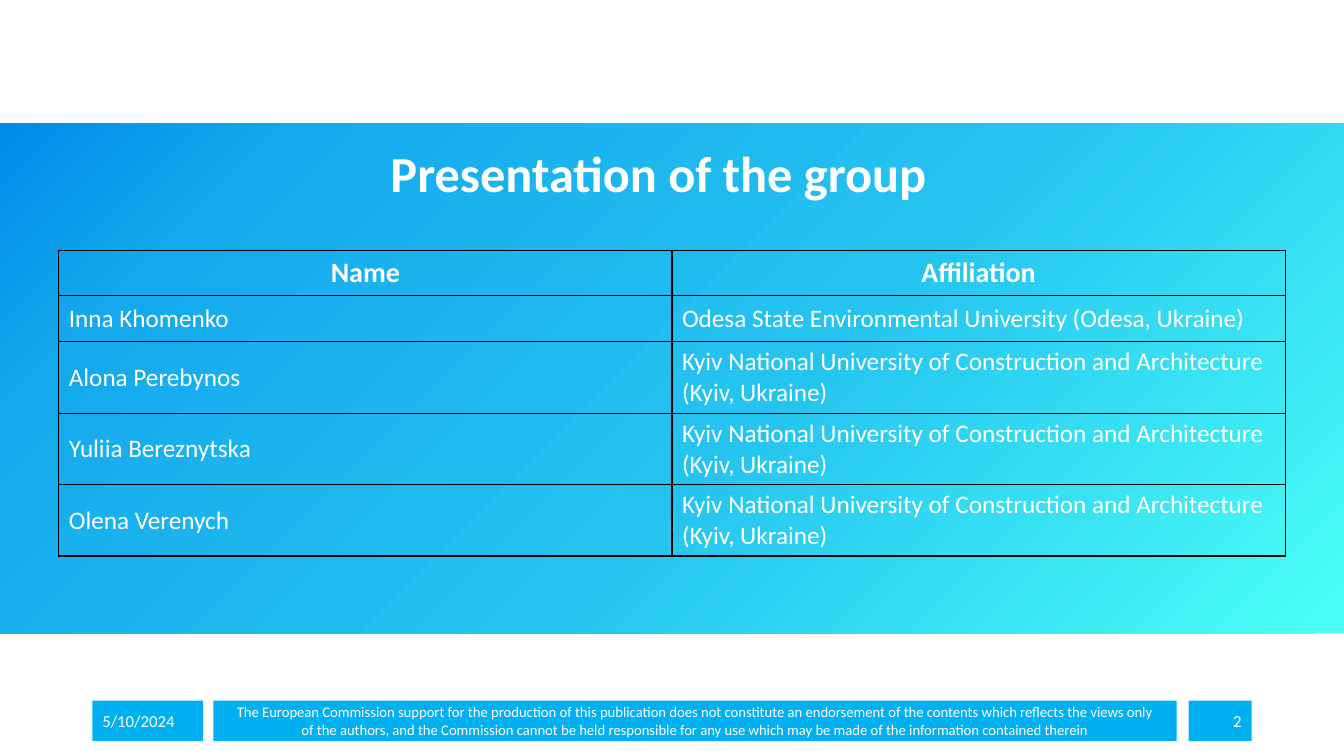
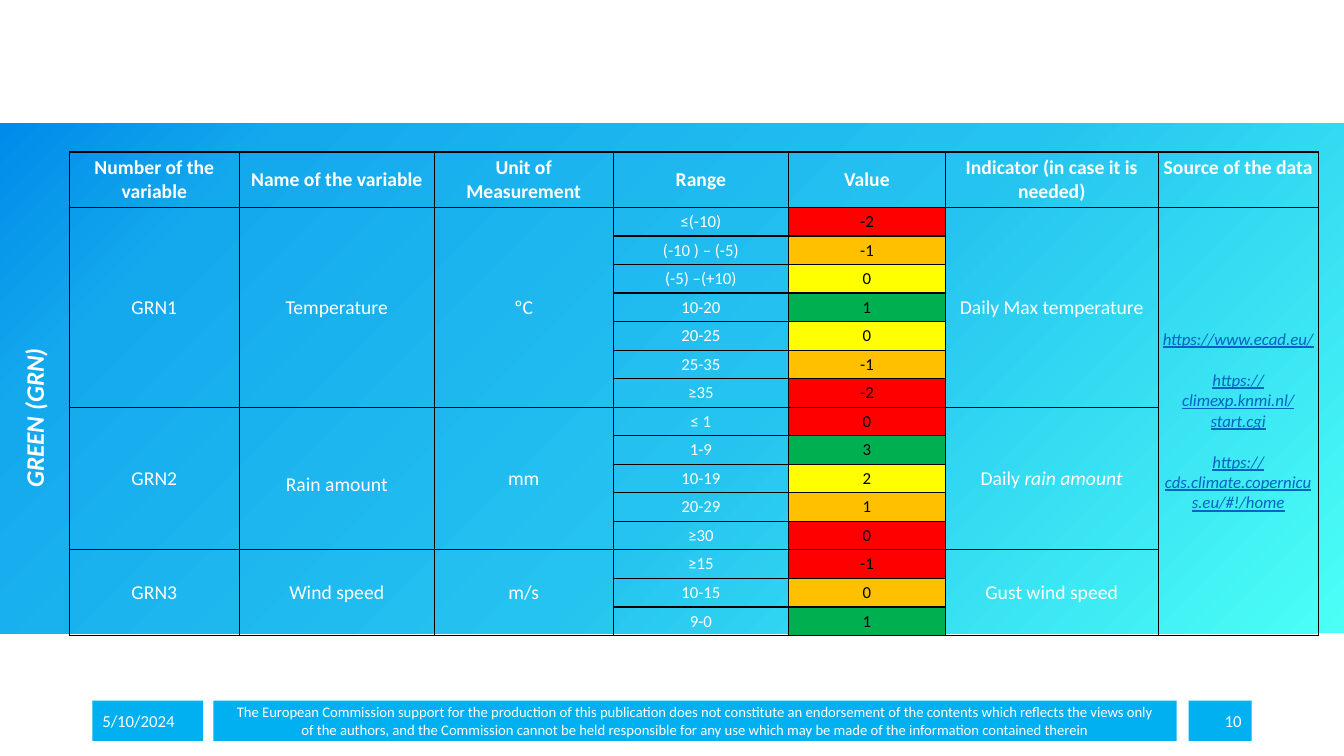
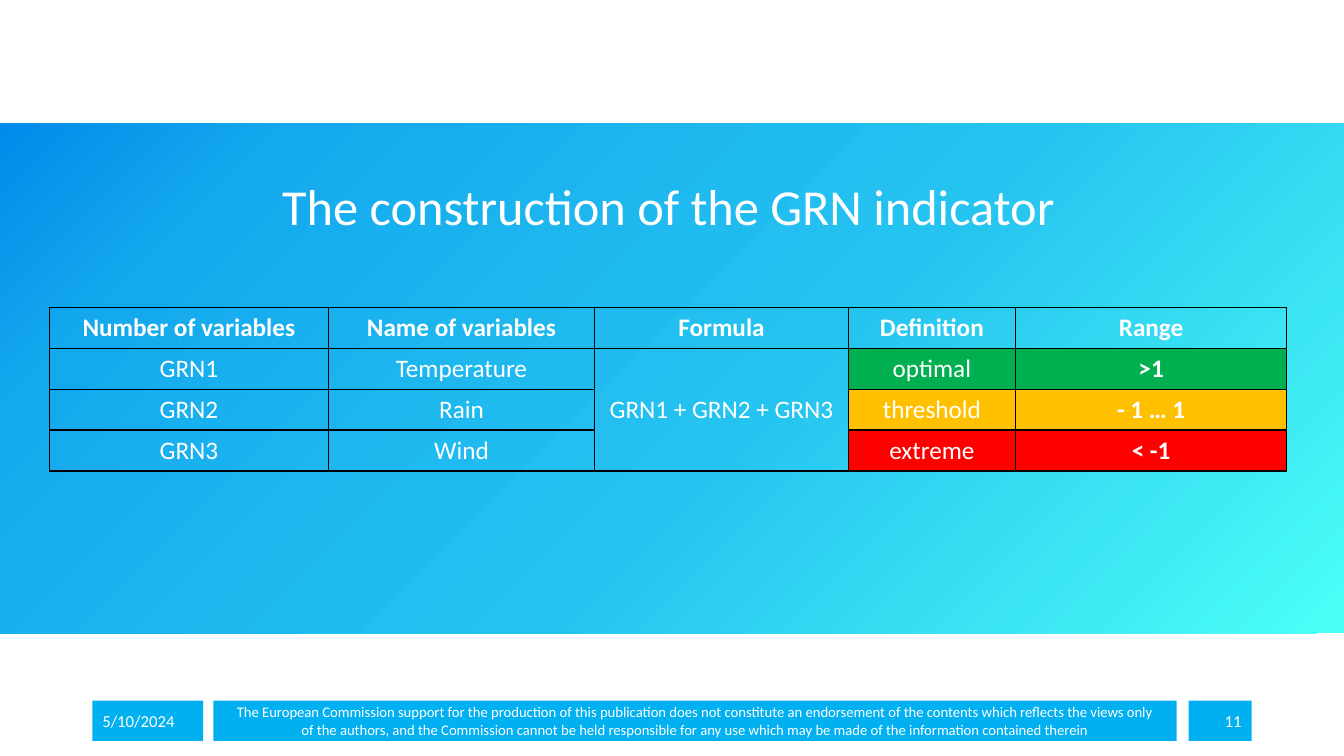
import dataclasses
import typing

import pptx
import pptx.dml.color
import pptx.enum.shapes
import pptx.enum.text
import pptx.oxml
import pptx.oxml.ns
import pptx.util

ALIGN = pptx.enum.text.PP_ALIGN
ANCHOR = pptx.enum.text.MSO_ANCHOR
COLUMNS, ROWS = 160, 90  # slide grid, square units
UNIT = pptx.util.Pt(6)


@dataclasses.dataclass(frozen=True)
class Theme:
    font: str = "Calibri"
    white: str = "FFFFFF"
    black: str = "000000"
    link: str = "0563C1"
    footer: str = "00B0F0"
    red: str = "FF0000"
    orange: str = "FFC000"
    yellow: str = "FFFF00"
    green: str = "00B050"
    band: tuple = ((0, "4BFFF6"), (44, "25C3F0"), (84, "14A9ED"), (100, "008BEA"))
    title: float = 36
    header: float = 20
    body: float = 18
    cell: float = 14
    small: float = 12
    legal: float = 10.5


THEME = Theme()
DATE = "5/10/2024"
DISCLAIMER = (
    "The European Commission support for the production of this publication does not "
    "constitute an endorsement of the contents which reflects the views only\n"
    "of the authors, and the Commission cannot be held responsible for any use which "
    "may be made of the information contained therein"
)


@dataclasses.dataclass
class Cell:
    text: str
    size: float = THEME.body
    color: str = THEME.white
    bold: bool = False
    italic: bool = False
    underline: bool = False
    fill: typing.Optional[str] = None
    align: ALIGN = ALIGN.CENTER
    anchor: ANCHOR = ANCHOR.MIDDLE
    spacing: float = 1
    gap: float = 0  # points between paragraphs
    italic_tail: str = ""


# Basics
def grid(n):
    return int(round(n * UNIT))


def rgb(value):
    return pptx.dml.color.RGBColor.from_string(value)


def write(tf, text, size, color=THEME.white, bold=False, italic=False, underline=False,
          align=ALIGN.LEFT, spacing=1, gap=0):
    tf.text = text
    for i, p in enumerate(tf.paragraphs):
        p.alignment = align
        p.line_spacing = spacing
        if gap and i:
            p.space_before = pptx.util.Pt(gap)
        for r in p.runs:
            style_run(r, size, color, bold, italic, underline)


def style_run(r, size, color, bold=False, italic=False, underline=False):
    r.font.name = THEME.font
    r.font.size = pptx.util.Pt(size)
    r.font.color.rgb = rgb(color)
    r.font.bold, r.font.italic, r.font.underline = bold, italic, underline


def add_rect(slide, left, top, width, height):
    sp = slide.shapes.add_shape(pptx.enum.shapes.MSO_SHAPE.RECTANGLE,
                                *map(grid, (left, top, width, height)))
    sp.shadow.inherit = False
    sp.line.fill.background()
    return sp


def add_label(slide, at, text, size, anchor=ANCHOR.TOP, **look):
    sp = slide.shapes.add_textbox(*map(grid, at))
    tf = sp.text_frame
    tf.word_wrap = True
    tf.vertical_anchor = anchor
    write(tf, text, size, **look)
    return sp


# Shared parts of every slide
def add_band(slide):
    sp = add_rect(slide, 0, 14.7, COLUMNS, 60.7)
    sp.fill.gradient()
    sp.fill.gradient_angle = 135
    stops = next(sp._element.spPr.iter(pptx.oxml.ns.qn("a:gsLst")))
    for stop in list(stops):
        stops.remove(stop)
    for position, color in THEME.band:
        stops.append(pptx.oxml.parse_xml(
            f'<a:gs {pptx.oxml.ns.nsdecls("a")} pos="{position * 1000}">'
            f'<a:srgbClr val="{color}"/></a:gs>'))


def add_footer(slide, number):
    boxes = (
        (11, 13.2, DATE, THEME.small, ALIGN.LEFT),
        (25.4, 114.7, DISCLAIMER, THEME.legal, ALIGN.CENTER),
        (141.5, 7.5, str(number), THEME.small, ALIGN.RIGHT),
    )
    for left, width, text, size, align in boxes:
        sp = add_rect(slide, left, 83.4, width, 4.8)
        sp.fill.solid()
        sp.fill.fore_color.rgb = rgb(THEME.footer)
        sp.text_frame.word_wrap = True
        sp.text_frame.vertical_anchor = ANCHOR.MIDDLE
        write(sp.text_frame, text, size, align=align)


def new_slide(prs, number):
    slide = prs.slides.add_slide(prs.slide_layouts[6])
    add_band(slide)
    add_footer(slide, number)
    return slide


# Tables: None in the data continues the cell above
def add_borders(cell):
    tc_pr = cell._tc.get_or_add_tcPr()
    for side in "LRTB":
        tc_pr.append(pptx.oxml.parse_xml(
            f'<a:ln{side} {pptx.oxml.ns.nsdecls("a")} w="12700"><a:solidFill>'
            f'<a:srgbClr val="{THEME.black}"/></a:solidFill></a:ln{side}>'))


def fill_cell(cell, data):
    add_borders(cell)
    if data and data.fill:
        cell.fill.solid()
        cell.fill.fore_color.rgb = rgb(data.fill)
    else:
        cell.fill.background()
    if data is None:
        return
    cell.vertical_anchor = data.anchor
    write(cell.text_frame, data.text, data.size, data.color, data.bold, data.italic,
          data.underline, data.align, data.spacing, data.gap)
    if data.italic_tail:
        r = cell.text_frame.paragraphs[0].add_run()
        r.text = data.italic_tail
        style_run(r, data.size, data.color, italic=True)


def add_table(slide, left, top, widths, heights, data, inset=None):
    frame = slide.shapes.add_table(len(heights), len(widths), grid(left), grid(top),
                                   grid(sum(widths)), grid(sum(heights)))
    table = frame.table
    table.first_row = table.horz_banding = False
    for column, width in zip(table.columns, widths):
        column.width = grid(width)
    for row, height in zip(table.rows, heights):
        row.height = grid(height)
    for c in range(len(widths)):
        start = 0
        for r in range(len(heights)):
            cell = table.cell(r, c)
            if inset is not None:
                cell.margin_left = cell.margin_right = grid(inset)
                cell.margin_top = cell.margin_bottom = grid(inset)
            fill_cell(cell, data[r][c])
            if data[r][c]:
                start = r
            if r > start and (r + 1 == len(heights) or data[r + 1][c]):
                table.cell(start, c).merge(cell)


# Slides
def group_slide(prs):
    slide = new_slide(prs, 2)
    add_label(slide, (11, 16.3, 134.8, 8.5), "Presentation of the group", THEME.title,
              ANCHOR.BOTTOM, bold=True, align=ALIGN.CENTER, spacing=0.9)
    kyiv = "Kyiv National University of Construction and Architecture (Kyiv, Ukraine)"
    members = (
        ("Inna Khomenko", "Odesa State Environmental University (Odesa, Ukraine)"),
        ("Alona Perebynos", kyiv),
        ("Yuliia Bereznytska", kyiv),
        ("Olena Verenych", kyiv),
    )
    data = [[Cell(t, THEME.header, bold=True, anchor=ANCHOR.TOP)
             for t in ("Name", "Affiliation")]]
    data += [[Cell(t, align=ALIGN.LEFT) for t in member] for member in members]
    add_table(slide, 7, 29.8, [73] * 2, [5.4, 5.5] + [8.5] * 3, data)


def variables_slide(prs):
    slide = new_slide(prs, 10)
    side = add_label(slide, (-6.5, 46.3, 21.1, 4.8), "GREEN (GRN)", THEME.body,
                     bold=True, italic=True)
    side.rotation = 270

    t = THEME
    groups = (
        (Cell("GRN1", t.cell), Cell("Temperature", t.cell), Cell("ºC", t.cell),
         Cell("Daily Max temperature", t.cell),
         (("≤(-10)", "-2", t.red), ("(-10 ) – (-5)", "-1", t.orange),
          ("(-5) –(+10)", "0", t.yellow), ("10-20", "1", t.green),
          ("20-25", "0", t.yellow), ("25-35", "-1", t.orange), ("≥35", "-2", t.red))),
        (Cell("GRN2", t.cell), Cell("Rain amount", t.cell, spacing=1.5),
         Cell("mm", t.cell), Cell("Daily ", t.cell, italic_tail="rain amount"),
         (("≤ 1", "0", t.red), ("1-9", "3", t.green), ("10-19", "2", t.yellow),
          ("20-29", "1", t.orange), ("≥30", "0", t.red))),
        (Cell("GRN3", t.cell), Cell("Wind speed", t.cell), Cell("m/s", t.cell),
         Cell("Gust wind speed", t.cell),
         (("≥15", "-1", t.red), ("10-15", "0", t.orange), ("9-0", "1", t.green))),
    )
    heads = ("Number of the variable", "Name of the variable", "Unit of Measurement",
             "Range", "Value", "Indicator (in case it is needed)", "Source of the data")
    data = [[Cell(h, t.cell, bold=True) for h in heads]]
    data[0][-1].anchor = ANCHOR.TOP
    for number, name, unit, indicator, ranges in groups:
        for i, (span, value, color) in enumerate(ranges):
            first = [number, name, unit] if i == 0 else [None] * 3
            data.append(first + [Cell(span, t.small),
                                 Cell(value, t.small, t.black, fill=color),
                                 indicator if i == 0 else None, None])
    data[1][-1] = Cell(
        "https://www.ecad.eu/\nhttps://climexp.knmi.nl/start.cgi\n"
        "https://cds.climate.copernicus.eu/#!/home",
        t.small, t.link, italic=True, underline=True, gap=14.5)
    add_table(slide, 8.25, 18.1, [20.25, 23.2, 21.3, 20.9, 18.65, 25.35, 19.05],
              [6.5] + [3.34] * (len(data) - 1), data, inset=0.5)


def indicator_slide(prs):
    slide = new_slide(prs, 11)
    heads = ("Number of variables", "Name of variables", "Formula", "Definition", "Range")
    levels = (
        ("GRN1", "Temperature", "optimal", ">1", THEME.green),
        ("GRN2", "Rain", "threshold", "- 1 … 1", THEME.orange),
        ("GRN3", "Wind", "extreme", "< -1", THEME.red),
    )
    data = [[Cell(h, bold=True, anchor=ANCHOR.TOP) for h in heads]]
    for number, name, definition, span, color in levels:
        data.append([Cell(number, anchor=ANCHOR.TOP), Cell(name, anchor=ANCHOR.TOP), None,
                     Cell(definition, fill=color, anchor=ANCHOR.TOP),
                     Cell(span, bold=True, fill=color, anchor=ANCHOR.TOP)])
    data[1][2] = Cell("GRN1 + GRN2 + GRN3")
    add_table(slide, 5.9, 36.6, [33.2, 31.7, 30.2, 19.9, 32.3], [4.87] * 4, data)
    add_label(slide, (19.1, 20.3, 121, 8.5), "The construction of the GRN indicator",
              THEME.title, align=ALIGN.CENTER)


def main():
    prs = pptx.Presentation()
    prs.slide_width, prs.slide_height = grid(COLUMNS), grid(ROWS)
    group_slide(prs)
    variables_slide(prs)
    indicator_slide(prs)
    prs.save("out.pptx")


if __name__ == "__main__":
    main()
